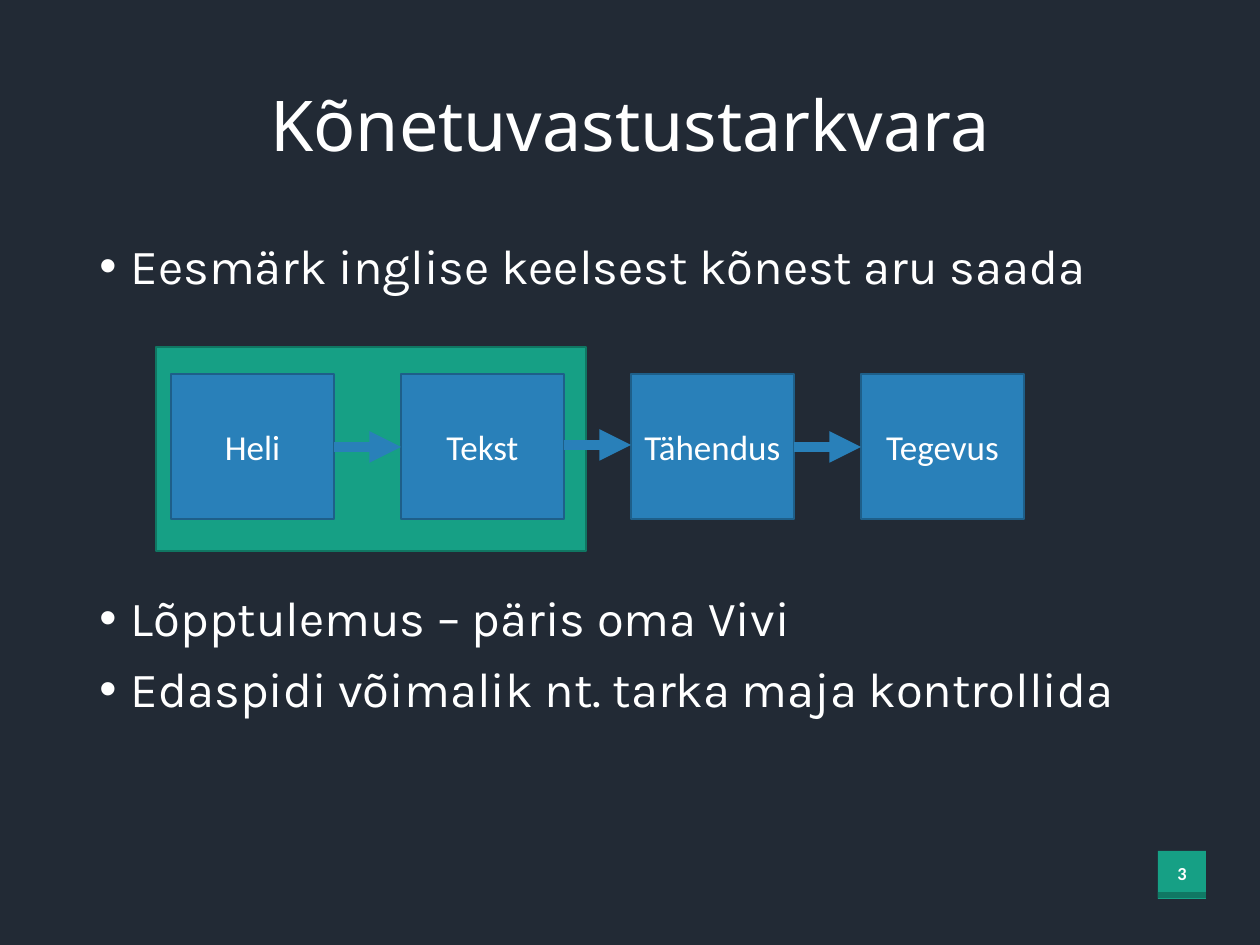
"""Build the speech recognition slide with its four-step flow diagram."""
import lxml.etree
import pptx
import pptx.dml.color
import pptx.enum.shapes
import pptx.enum.text
import pptx.oxml.ns
import pptx.util

THEME = {
    "bg": "222A35", "text": "FFFFFF",
    "green": "16A085", "green_dark": "107864", "green_line": "107662",
    "blue": "2980B9", "blue_line": "1E5F89",
    "title_font": "Noto Sans", "body_font": "Karla", "label_font": "Calibri",
    "title_size": 40, "body_size": 28, "label_size": 20, "number_size": 10.5,
}
PX = 914400 / 126
RGB = pptx.dml.color.RGBColor.from_string
qn = pptx.oxml.ns.qn
CENTER = pptx.enum.text.PP_ALIGN.CENTER
MIDDLE = pptx.enum.text.MSO_ANCHOR.MIDDLE


def add_rect(s, box, fill, line=None):
    sp = s.shapes.add_shape(pptx.enum.shapes.MSO_SHAPE.RECTANGLE, *[round(v * PX) for v in box])
    sp.shadow.inherit = False
    sp.fill.solid()
    sp.fill.fore_color.rgb = RGB(THEME[fill])
    if line:
        sp.line.color.rgb = RGB(THEME[line])
        sp.line.width = pptx.util.Pt(1)
    else:
        sp.line.fill.background()
    return sp


def set_text(p, text, kind, size, align=None, bold=False):
    p.text = text
    p.alignment = align
    font = p.runs[0].font
    font.name = THEME[kind + "_font"]
    font.size = pptx.util.Pt(THEME[size + "_size"])
    font.bold = bold
    font.color.rgb = RGB(THEME["text"])


prs = pptx.Presentation()
prs.slide_width = round(1260 * PX)
prs.slide_height = round(945 * PX)
s = prs.slides.add_slide(prs.slide_layouts[6])
s.background.fill.solid()
s.background.fill.fore_color.rgb = RGB(THEME["bg"])

add_rect(s, (1158, 851, 48, 48), "green")
add_rect(s, (1158, 892, 48, 6), "green_dark")
number = s.shapes.add_textbox(*[round(v * PX) for v in (1158, 856, 48, 35)])
number.text_frame.word_wrap = False
set_text(number.text_frame.paragraphs[0], "3", "label", "number", CENTER, True)

title = s.shapes.add_textbox(*[round(v * PX) for v in (87, 72, 1086, 113)])
tf = title.text_frame
tf.word_wrap = True
tf.vertical_anchor = MIDDLE
set_text(tf.paragraphs[0], "Kõnetuvastustarkvara", "title", "title", CENTER)
tf.paragraphs[0].line_spacing = 0.9

add_rect(s, (156, 347, 430, 204), "green", "green_line")

body = s.shapes.add_textbox(*[round(v * PX) for v in (87, 236, 1086, 601)])
tf = body.text_frame
tf.word_wrap = True
bullets = [
    ("Eesmärk inglise keelsest kõnest aru saada", 10),
    ("Lõpptulemus – päris oma Vivi", 171),
    ("Edaspidi võimalik nt. tarka maja kontrollida", 10),
]
for i, (text, before) in enumerate(bullets):
    p = tf.paragraphs[0] if i == 0 else tf.add_paragraph()
    set_text(p, text, "body", "body")
    p.line_spacing = 0.9
    p.space_before = pptx.util.Pt(before)
    pPr = p._p.get_or_add_pPr()
    indent = pptx.util.Inches(0.25)
    pPr.set("marL", str(indent))
    pPr.set("indent", str(-indent))
    lxml.etree.SubElement(pPr, qn("a:buFont"), typeface="Arial")
    lxml.etree.SubElement(pPr, qn("a:buChar"), char="•")

left, top, width, height, pitch = 171, 374, 163, 145, 230
steps = ["Heli", "Tekst", "Tähendus", "Tegevus"]
for i, step in enumerate(steps):
    sp = add_rect(s, (left + i * pitch, top, width, height), "blue", "blue_line")
    sp.text_frame.vertical_anchor = MIDDLE
    set_text(sp.text_frame.paragraphs[0], step, "label", "label", CENTER)

for i, y in enumerate((447, 445, 447)):
    start, end = left + i * pitch + width, left + (i + 1) * pitch
    arrow = s.shapes.add_connector(
        pptx.enum.shapes.MSO_CONNECTOR.STRAIGHT, *[round(v * PX) for v in (start, y, end, y)])
    arrow.line.color.rgb = RGB(THEME["blue"])
    arrow.line.width = pptx.util.Pt(6)
    lxml.etree.SubElement(arrow.line._get_or_add_ln(), qn("a:tailEnd"), type="triangle")
    lxml.etree.SubElement(arrow._element.spPr, qn("a:effectLst"))

prs.save("out.pptx")
